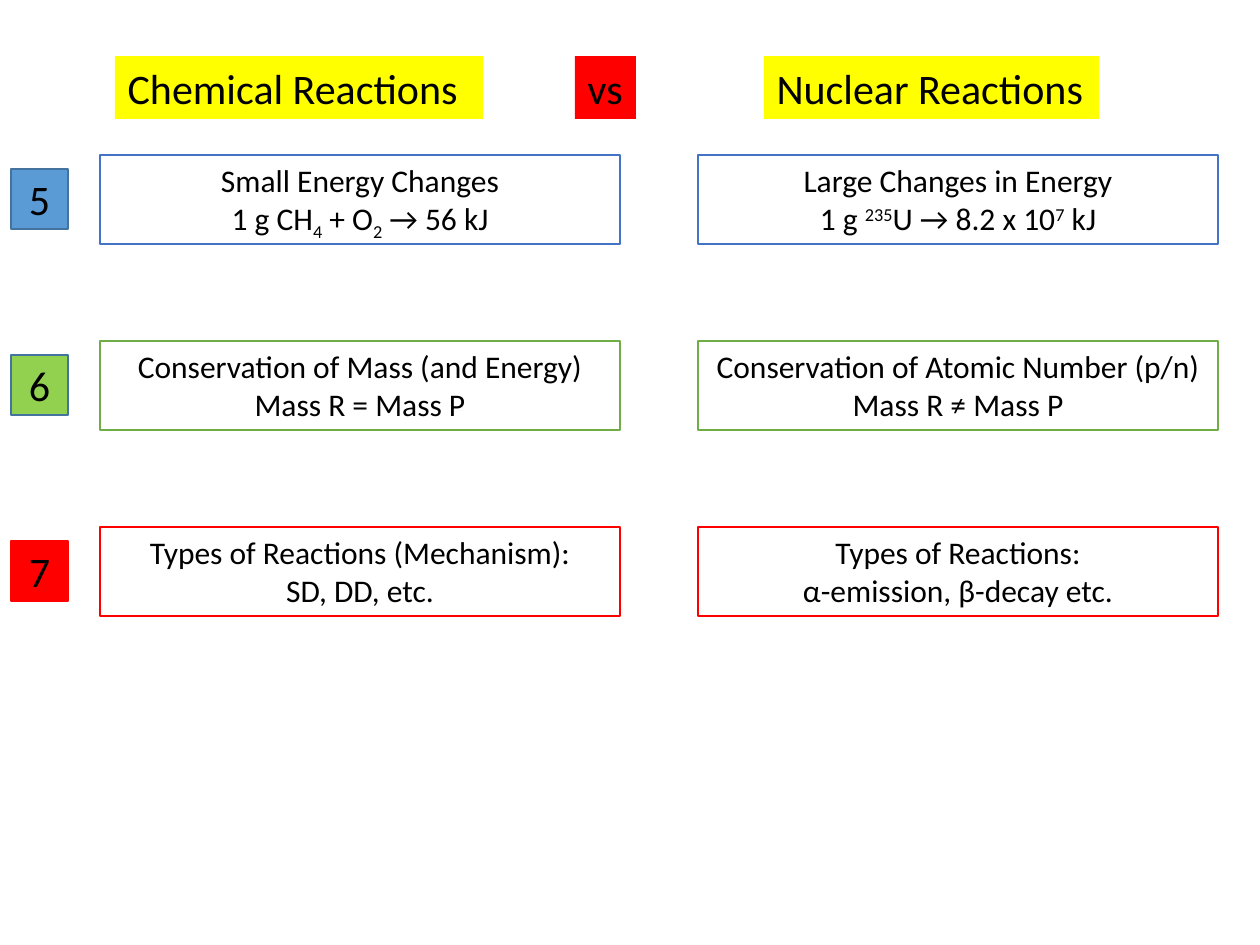
from dataclasses import dataclass

from pptx import Presentation
from pptx.dml.color import RGBColor
from pptx.enum.shapes import MSO_SHAPE as Shape
from pptx.enum.text import MSO_ANCHOR as Anchor, MSO_AUTO_SIZE as AutoSize, PP_ALIGN as Align
from pptx.util import Emu, Pt

PX = 914400 / 126
BLACK = RGBColor(0x00, 0x00, 0x00)
WHITE = RGBColor(0xFF, 0xFF, 0xFF)
YELLOW = RGBColor(0xFF, 0xFF, 0x00)
RED = RGBColor(0xFF, 0x00, 0x00)
BLUE = RGBColor(0x44, 0x72, 0xC4)
SKY = RGBColor(0x5B, 0x9B, 0xD5)
STEEL = RGBColor(0x43, 0x73, 0x9E)
GREEN = RGBColor(0x70, 0xAD, 0x47)
LIME = RGBColor(0x92, 0xD0, 0x50)

SUB, SUPER = -25000, 30000
COMPARISON_LAYOUT = 4
LEFT_X, RIGHT_X, BOX_WIDTH, BOX_HEIGHT = 100, 698, 520, 89
BADGE_X, BADGE_WIDTH, BADGE_HEIGHT = 11, 57, 60
FIRST_ROW, ROW_STEP, BADGE_DROP = 155, 186, 14

Span = tuple[str, int]
Line = list[Span]


@dataclass(frozen=True)
class Heading:
    placeholder: int
    text: str
    left: int
    width: int
    fill: RGBColor


@dataclass(frozen=True)
class Row:
    number: str
    badge_fill: RGBColor
    badge_line: RGBColor
    box_line: RGBColor
    chemical: list[Line]
    nuclear: list[Line]


HEADINGS = [
    Heading(0, "vs", 575, 61, RED),
    Heading(1, "Chemical Reactions", 115, 368, YELLOW),
    Heading(3, "Nuclear Reactions", 764, 335, YELLOW),
]

ROWS = [
    Row("5", SKY, STEEL, BLUE,
        [[("Small Energy Changes", 0)],
         [("1 g CH", 0), ("4", SUB), (" + O", 0), ("2", SUB), (" → 56 kJ", 0)]],
        [[("Large Changes in Energy", 0)],
         [("1 g ", 0), ("235", SUPER), ("U → 8.2 x 10", 0), ("7", SUPER), (" kJ", 0)]]),
    Row("6", LIME, STEEL, GREEN,
        [[("Conservation of Mass (and Energy)", 0)], [("Mass R = Mass P", 0)]],
        [[("Conservation of Atomic Number (p/n)", 0)], [("Mass R ≠ Mass P", 0)]]),
    Row("7", RED, RED, RED,
        [[("Types of Reactions (Mechanism):", 0)], [("SD, DD, etc.", 0)]],
        [[("Types of Reactions:", 0)], [("α-emission, β-decay etc.", 0)]]),
]


def px(length: int) -> Emu:
    """Turn pixels into EMU."""
    return Emu(round(length * PX))


def place(box, left: int, top: int, width: int, height: int) -> None:
    """Set the position and size of a box."""
    box.left, box.top, box.width, box.height = map(px, (left, top, width, height))


def paint(box, fill: RGBColor) -> None:
    """Give a box a solid fill."""
    box.fill.solid()
    box.fill.fore_color.rgb = fill


def write(box, lines: list[Line], size: int, align: Align, anchor: Anchor) -> None:
    """Fill a box with lines of text, run by run."""
    frame = box.text_frame
    frame.word_wrap = True
    frame.auto_size = AutoSize.NONE
    frame.vertical_anchor = anchor
    for index, line in enumerate(lines):
        para = frame.add_paragraph() if index else frame.paragraphs[0]
        para.alignment = align
        para.space_before = Pt(0)
        for text, baseline in line:
            span = para.add_run()
            span.text = text
            span.font.name = "Calibri"
            span.font.size = Pt(size)
            span.font.bold = False
            span.font.color.rgb = BLACK
            if baseline:
                span.font._element.set("baseline", str(baseline))


def draw_heading(page, heading: Heading) -> None:
    """Format one placeholder as a coloured heading."""
    box = next(item for item in page.placeholders
               if item.placeholder_format.idx == heading.placeholder)
    place(box, heading.left, 56, heading.width, 63)
    paint(box, heading.fill)
    box.text_frame.margin_right = 0
    write(box, [[(heading.text, 0)]], 24, Align.LEFT, Anchor.TOP)


def draw_box(page, left: int, top: int, width: int, height: int,
             fill: RGBColor, line: RGBColor):
    """Draw an outlined rectangle."""
    box = page.shapes.add_shape(Shape.RECTANGLE, *map(px, (left, top, width, height)))
    box.shadow.inherit = False
    paint(box, fill)
    box.line.color.rgb = line
    box.line.width = Pt(1)
    return box


def draw_row(page, row: Row, top: int) -> None:
    """Draw a numbered badge and its two statements."""
    badge = draw_box(page, BADGE_X, top + BADGE_DROP, BADGE_WIDTH, BADGE_HEIGHT,
                     row.badge_fill, row.badge_line)
    write(badge, [[(row.number, 0)]], 24, Align.CENTER, Anchor.MIDDLE)
    for left, lines in ((LEFT_X, row.chemical), (RIGHT_X, row.nuclear)):
        box = draw_box(page, left, top, BOX_WIDTH, BOX_HEIGHT, WHITE, row.box_line)
        write(box, lines, 18, Align.CENTER, Anchor.TOP)


def main() -> None:
    """Build the comparison slide and save it."""
    deck = Presentation()
    deck.slide_width, deck.slide_height = px(1260), px(945)
    page = deck.slides.add_slide(deck.slide_layouts[COMPARISON_LAYOUT])
    for heading in HEADINGS:
        draw_heading(page, heading)
    for box in list(page.placeholders):
        if not box.text_frame.text:
            box.element.getparent().remove(box.element)
    for index, row in enumerate(ROWS):
        draw_row(page, row, FIRST_ROW + index * ROW_STEP)
    deck.save("out.pptx")


if __name__ == "__main__":
    main()
